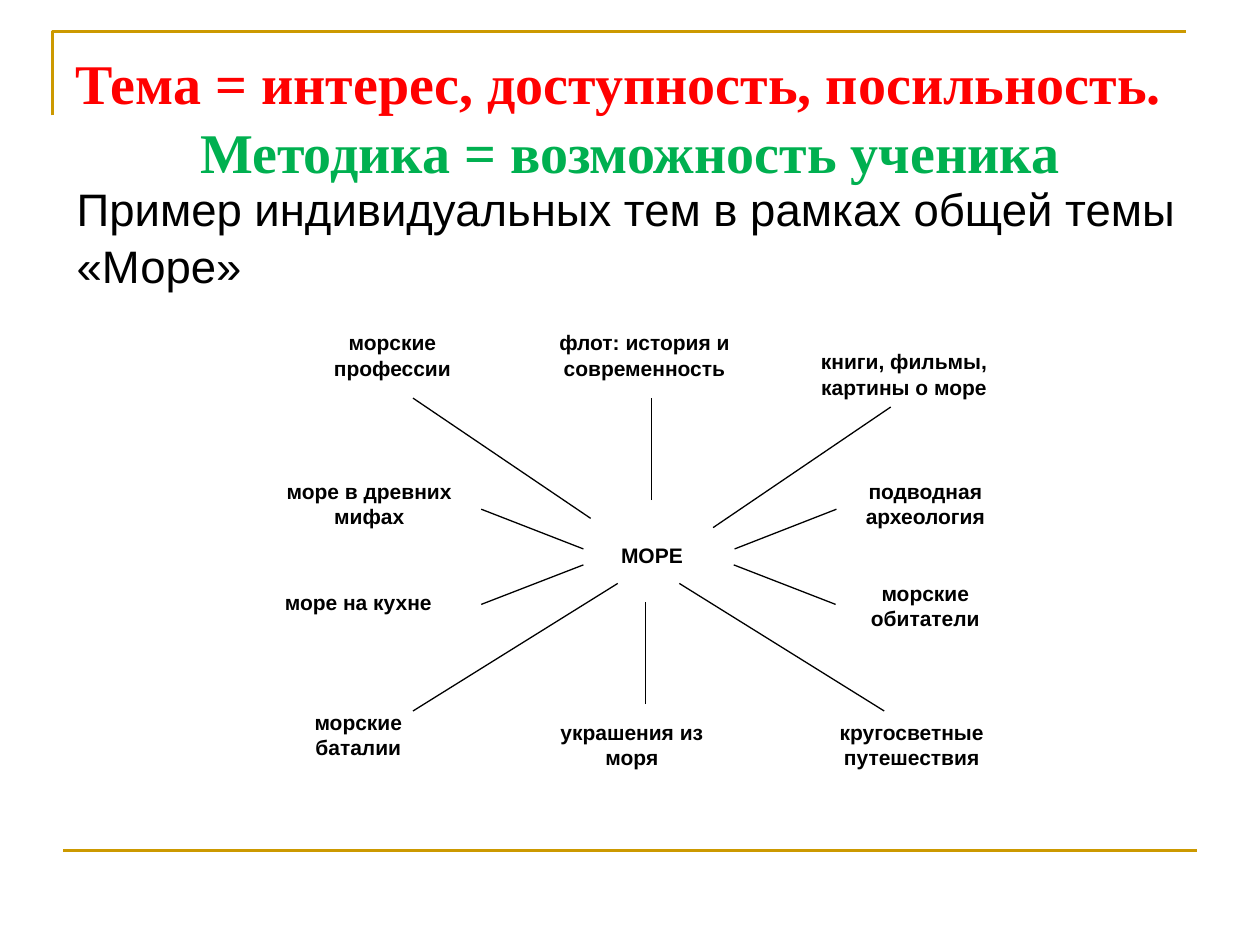
import pptx
import pptx.dml.color
import pptx.enum.shapes
import pptx.enum.text
import pptx.util
import lxml.etree
from dataclasses import dataclass

Pt = pptx.util.Pt
RGB = pptx.dml.color.RGBColor.from_string
ALIGN = pptx.enum.text.PP_ALIGN


@dataclass(frozen=True)
class Theme:
    gold: str = "CC9900"
    red: str = "FF0000"
    green: str = "00B050"
    black: str = "000000"
    white: str = "FFFFFF"
    serif: str = "Times New Roman"
    sans: str = "Arial"
    title_size: int = 32
    subtitle_size: int = 26
    label_size: int = 12


theme = Theme()


def add_line(start, end, color, width):
    line = slide.shapes.add_connector(
        pptx.enum.shapes.MSO_CONNECTOR.STRAIGHT, *map(Pt, start + end))
    line.line.color.rgb = RGB(color)
    line.line.width = Pt(width)
    lxml.etree.SubElement(line._element.spPr, pptx.oxml.ns.qn("a:effectLst"))


def write(paragraph, text, font, size, color, bold, align):
    paragraph.text = text
    paragraph.alignment = align
    paragraph.font.name = font
    paragraph.font.size = Pt(size)
    paragraph.font.color.rgb = RGB(color)
    paragraph.font.bold = bold


deck = pptx.Presentation()
deck.slide_width, deck.slide_height = Pt(720), Pt(540)
slide = deck.slides.add_slide(deck.slide_layouts[6])

# Gold corner and bottom rule
pen = slide.shapes.build_freeform(Pt(30), Pt(66))
pen.add_line_segments([(Pt(30), Pt(18)), (Pt(678), Pt(18))], close=False)
corner = pen.convert_to_shape()
corner.shadow.inherit = False
corner.fill.background()
corner.line.color.rgb = RGB(theme.gold)
corner.line.width = Pt(1.5)
add_line((36, 486), (684, 486), theme.gold, 1.5)

# Mind map: the central topic, then the themes (text, left, top, width, height)
topics = [
    ("МОРЕ", 321.8, 306.7, 101.5, 28.8),
    ("морские профессии", 173.5, 185, 101.5, 36.7),
    ("море в древних мифах", 150.5, 270, 121, 36.7),
    ("море на кухне", 154, 333.4, 101.5, 31.7),
    ("морские баталии", 154, 401.8, 101.5, 36.7),
    ("морские обитатели", 478, 328.3, 101.5, 36.7),
    ("подводная археология", 478, 270, 101.5, 36.7),
    ("украшения из моря", 310.3, 407.5, 101.5, 36.7),
    ("книги, фильмы, картины о море", 446.4, 195.8, 140.4, 36.7),
    ("флот: история и современность", 286.6, 185, 163.4, 36.7),
    ("кругосветные путешествия", 470.2, 407.5, 101.5, 36.7),
]
for text, *bounds in topics:
    topic = slide.shapes.add_shape(
        pptx.enum.shapes.MSO_SHAPE.RECTANGLE, *map(Pt, bounds))
    topic.shadow.inherit = False
    topic.fill.solid()
    topic.fill.fore_color.rgb = RGB(theme.white)
    topic.line.fill.background()
    topic.text_frame.word_wrap = True
    topic.text_frame.vertical_anchor = pptx.enum.text.MSO_ANCHOR.TOP
    write(topic.text_frame.paragraphs[0], text, theme.sans, theme.label_size,
          theme.black, True, ALIGN.CENTER)

# Rays between the centre and the themes
rays = [
    ((372.5, 285.8), (372.5, 227.5)),
    ((407.5, 301.5), (509, 232.6)),
    ((337.5, 296.2), (236, 227.5)),
    ((419.8, 313.7), (478, 291)),
    ((333.4, 313.7), (275, 291)),
    ((333.4, 322.8), (275, 345.4)),
    ((419.3, 322.8), (477.5, 345.4)),
    ((353, 333.4), (236, 406.3)),
    ((388.2, 333.4), (505.3, 406.3)),
    ((368.7, 402.3), (368.7, 344)),
]
for start, end in rays:
    add_line(start, end, theme.black, 0.75)

# Title and subtitle
headings = [
    ((36, 21.6, 648, 90), pptx.enum.text.MSO_ANCHOR.MIDDLE,
     theme.serif, theme.title_size, True,
     [("Тема = интерес, доступность, посильность.", theme.red, ALIGN.LEFT),
      ("Методика = возможность ученика", theme.green, ALIGN.CENTER)]),
    ((36.7, 100, 663, 62.6), pptx.enum.text.MSO_ANCHOR.TOP,
     theme.sans, theme.subtitle_size, False,
     [("Пример индивидуальных тем в рамках общей темы", theme.black, ALIGN.LEFT),
      ("«Море»", theme.black, ALIGN.LEFT)]),
]
for bounds, anchor, font, size, bold, lines in headings:
    frame = slide.shapes.add_textbox(*map(Pt, bounds)).text_frame
    frame.word_wrap = True
    frame.vertical_anchor = anchor
    for index, (text, color, align) in enumerate(lines):
        paragraph = frame.add_paragraph() if index else frame.paragraphs[0]
        paragraph.space_before = Pt(1.5)
        write(paragraph, text, font, size, color, bold, align)

deck.save("out.pptx")
